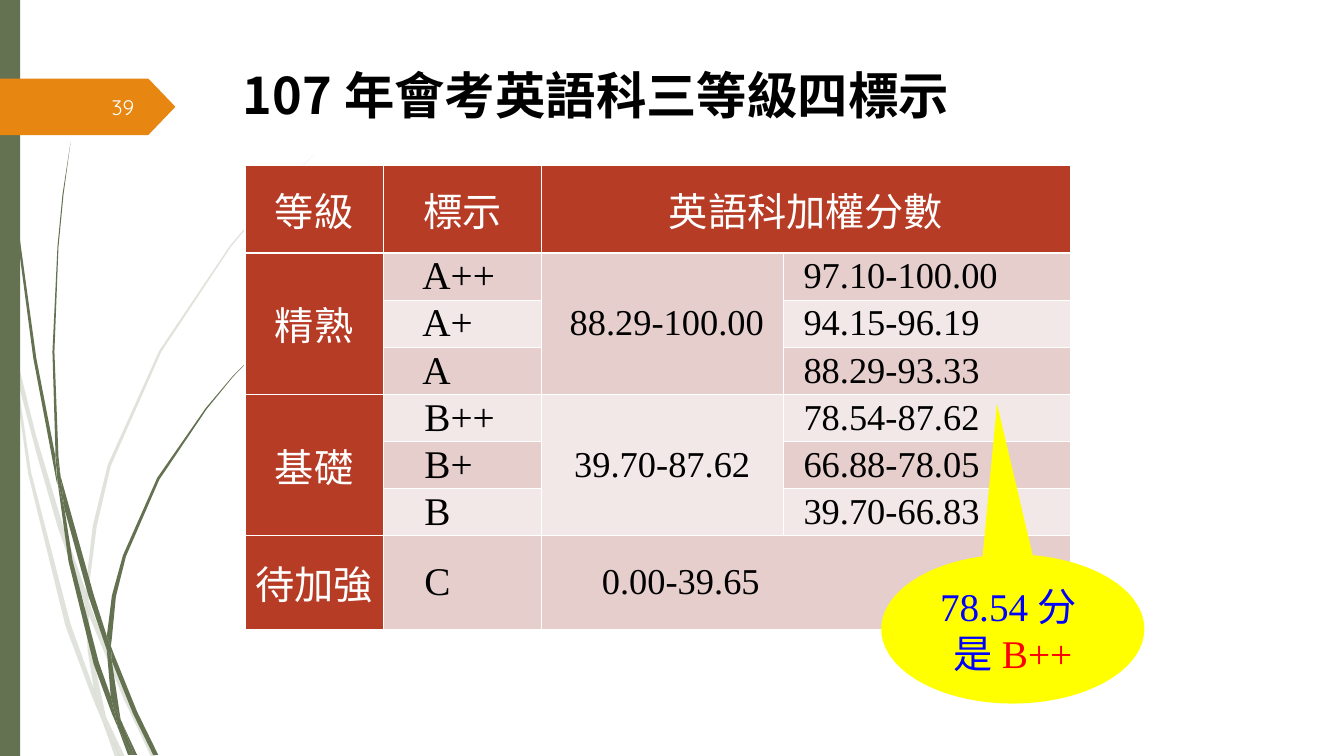
from lxml.etree import SubElement
from pptx import Presentation
from pptx.dml.color import RGBColor
from pptx.enum.shapes import MSO_SHAPE as Shape
from pptx.enum.text import MSO_ANCHOR as Anchor, PP_ALIGN as Align
from pptx.oxml.ns import qn
from pptx.util import Inches, Pt

COLORS = {
    "olive": "647252", "orange": "E78712", "red_brown": "B73C26",
    "band": "E6CECD", "light_band": "F3E8E8", "yellow": "FFFF00", "blue": "0000FF",
    "red": "FF0000", "black": "000000", "white": "FFFFFF", "number": "FEFFFF",
}
CJK, SANS, SERIF = "Noto Sans CJK SC", "Arial", "Times New Roman"

# Outlines of the grass blades, as (x, y) corners in inches.
PALE_BLADES = [
    [(0.11, 3.5), (0.08, 3.22), (0, 2.82), (0, 2.99), (0.1, 3.44)],
    [(0.57, 5.22), (0.84, 5.99), (0.85, 5.86), (0.62, 5.2), (0.36, 4.33), (0.14, 3.45),
     (0.17, 3.76), (0.36, 4.49)],
    [(0.92, 6.07), (0.88, 5.96), (0.88, 6.1), (1.23, 6.94), (1.5, 7.51), (1.55, 7.51),
     (1.27, 6.92)],
    [(1.19, 7.51), (1.24, 7.51), (1.05, 7.11)],
    [(0.93, 6.83), (0.7, 6.19), (0.31, 4.69), (0.17, 3.76), (0.11, 3.5), (0.28, 4.7),
     (0.65, 6.21), (0.92, 6.93), (1.01, 7.14), (0.99, 7.07)],
    [(0.84, 5.99), (0.87, 6.46), (0.93, 6.83), (0.96, 6.92), (1.05, 7.11), (1.04, 7.06),
     (0.91, 6.46), (0.88, 6.1), (0.88, 6.08)],
    [(0.88, 5.84), (0.96, 5.22), (1.1, 4.62), (1.6, 3.49), (2.29, 2.45), (2.68, 1.98),
     (2.9, 1.75), (3.12, 1.53), (2.89, 1.75), (2.68, 1.97), (2.28, 2.44), (1.58, 3.48),
     (1.07, 4.61), (0.92, 5.22), (0.85, 5.84), (0.85, 5.86), (0.88, 5.96)],
    [(1.01, 7.14), (1.14, 7.51), (1.19, 7.51)],
    [(0.88, 6.08), (0.88, 6.1), (0.88, 5.96), (0.85, 5.86), (0.84, 5.99)],
    [(0.96, 6.92), (0.93, 6.83), (0.99, 7.07), (1.01, 7.14), (1.19, 7.51), (1.05, 7.11)],
]
DARK_BLADES = [
    [(0.07, 1.1), (0.17, 2.33), (0.33, 3.55), (0.56, 4.77), (0.57, 4.81), (0.55, 4.57),
     (0.55, 4.53), (0.36, 3.55), (0.19, 2.32), (0.08, 1.09), (0.05, 0.48), (0.03, 0),
     (0.03, 0.48)],
    [(0.88, 5.92), (1.06, 6.45), (1.06, 6.33), (1.06, 6.31), (0.93, 5.9), (0.6, 4.72),
     (0.64, 5.05)],
    [(1.13, 6.49), (1.1, 6.41), (1.11, 6.56), (1.32, 7.08), (1.52, 7.49), (1.57, 7.49),
     (1.36, 7.06)],
    [(1.1, 6.91), (0.98, 6.57), (0.72, 5.56), (0.64, 5.05), (0.57, 4.77), (0.68, 5.57),
     (0.93, 6.59), (1.11, 7.08), (1.17, 7.22), (1.16, 7.17)],
    [(0.6, 4.72), (0.58, 4.53), (0.54, 3.49), (0.58, 2.45), (0.63, 1.93), (0.7, 1.41),
     (0.62, 1.93), (0.57, 2.45), (0.52, 3.49), (0.55, 4.49)],
    [(1.33, 7.49), (1.36, 7.49), (1.22, 7.19)],
    [(0.57, 4.77), (0.64, 5.05), (0.6, 4.72), (0.55, 4.49), (0.55, 4.53)],
    [(1.11, 6.33), (1.15, 5.92), (1.25, 5.52), (1.58, 4.76), (2.05, 4.06), (2.31, 3.74),
     (2.6, 3.44), (2.31, 3.73), (2.04, 4.05), (1.56, 4.74), (1.22, 5.51), (1.11, 5.91),
     (1.06, 6.31), (1.1, 6.41)],
    [(1.17, 7.22), (1.27, 7.49), (1.31, 7.49)],
    [(1.06, 6.45), (1.1, 6.92), (1.16, 7.06), (1.22, 7.19), (1.2, 7.16), (1.11, 6.56),
     (1.09, 6.51)],
    [(1.06, 6.45), (1.09, 6.51), (1.11, 6.56), (1.1, 6.41), (1.06, 6.31)],
    [(1.16, 7.06), (1.1, 6.91), (1.16, 7.17), (1.17, 7.22), (1.31, 7.49), (1.33, 7.49),
     (1.22, 7.19)],
]

COLUMNS = [1.37, 1.57, 2.4, 2.85]
ROWS = [0.87] + [2.8 / 6] * 6 + [0.93]
SCORES = [
    ["等級", "標示", "英語科加權分數", ""],
    ["精熟", "A++", "88.29-100.00", "97.10-100.00"],
    ["", "A+", "", "94.15-96.19"],
    ["", "A", "", "88.29-93.33"],
    ["基礎", "B++", "39.70-87.62", "78.54-87.62"],
    ["", "B+", "", "66.88-78.05"],
    ["", "B", "", "39.70-66.83"],
    ["待加強", "C", "0.00-39.65", ""],
]
MERGES = [((0, 2), (0, 3)), ((1, 0), (3, 0)), ((1, 2), (3, 2)),
          ((4, 0), (6, 0)), ((4, 2), (6, 2)), ((7, 2), (7, 3))]
INDENTS = {1: 0.41, 3: 0.2}
SPECIAL_INDENTS = {(1, 1): 0.39, (2, 1): 0.39, (3, 1): 0.39, (1, 2): 0.11, (7, 2): 0.6}


def rgb(name):
    return RGBColor.from_string(COLORS[name])


def add_span(para, text, size, font, color, bold=False):
    span = para.add_run()
    span.text = text
    span.font.size, span.font.name, span.font.bold = Pt(size), font, bold
    span.font.color.rgb = rgb(color)
    east_asian = SubElement(span.font._element, qn("a:ea"))
    east_asian.set("typeface", CJK)


def paint(shape, color):
    shape.shadow.inherit = False
    shape.fill.solid()
    shape.fill.fore_color.rgb = rgb(color)
    shape.line.fill.background()


def add_block(page, kind, left, top, width, height, color):
    block = page.shapes.add_shape(kind, Inches(left), Inches(top),
                                  Inches(width), Inches(height))
    paint(block, color)
    return block


def add_label(page, left, top, width, height, anchor, align):
    """Add a text box and return its first paragraph."""
    box = page.shapes.add_textbox(Inches(left), Inches(top), Inches(width), Inches(height))
    box.text_frame.word_wrap = True
    box.text_frame.vertical_anchor = anchor
    para = box.text_frame.paragraphs[0]
    para.alignment = align
    return para


def add_blade(page, corners, opacity):
    outline = [(Inches(x), Inches(y)) for x, y in corners]
    builder = page.shapes.build_freeform(*outline[0])
    builder.add_line_segments(outline[1:], close=True)
    blade = builder.convert_to_shape()
    paint(blade, "olive")
    if opacity < 100:
        color = blade._element.spPr.find(qn("a:solidFill")).find(qn("a:srgbClr"))
        SubElement(color, qn("a:alpha"), val=str(opacity * 1000))


def add_cell_borders(cell):
    properties = cell._tc.get_or_add_tcPr()
    for side in ("lnL", "lnR", "lnT", "lnB"):
        line = SubElement(properties, qn(f"a:{side}"), w=str(Pt(1)))
        fill = SubElement(line, qn("a:solidFill"))
        SubElement(fill, qn("a:srgbClr"), val=COLORS["white"])


def fill_cell(cell, row, column, text):
    heading = row == 0 or column == 0
    band = "band" if row % 2 else "light_band"
    add_cell_borders(cell)
    cell.fill.solid()
    cell.fill.fore_color.rgb = rgb("red_brown" if heading else band)
    cell.vertical_anchor = Anchor.MIDDLE
    indent = 0.02 if heading else SPECIAL_INDENTS.get((row, column), INDENTS.get(column, 0.02))
    cell.margin_left, cell.margin_right = Inches(indent), Inches(0.02)
    cell.margin_top = cell.margin_bottom = 0
    if not text:
        return
    para = cell.text_frame.paragraphs[0]
    centred = heading or (column == 2 and row < 7)
    para.alignment = Align.CENTER if centred else Align.LEFT
    size = 28 if heading or column == 1 else 26
    add_span(para, text, size, SANS if heading else SERIF, "white" if heading else "black")


def add_score_table(page):
    frame = page.shapes.add_table(len(ROWS), len(COLUMNS), Inches(2.43), Inches(1.64),
                                  Inches(sum(COLUMNS)), Inches(sum(ROWS)))
    table = frame.table
    for column, width in zip(table.columns, COLUMNS):
        column.width = Inches(width)
    for row, height in zip(table.rows, ROWS):
        row.height = Inches(height)
    for row, texts in enumerate(SCORES):
        for column, text in enumerate(texts):
            fill_cell(table.cell(row, column), row, column, text)
    for first, last in MERGES:
        table.cell(*first).merge(table.cell(*last))


def add_callout(page):
    callout = add_block(page, Shape.OVAL_CALLOUT, 8.74, 5.5, 2.61, 1.48, "yellow")
    callout.adjustments[0], callout.adjustments[1] = -0.06, -1.51
    callout.text_frame.vertical_anchor = Anchor.MIDDLE
    para = callout.text_frame.paragraphs[0]
    para.alignment = Align.CENTER
    add_span(para, "78.54分 ", 28, SERIF, "blue")
    para.add_line_break()
    add_span(para, "是", 28, SERIF, "blue")
    add_span(para, "B++", 28, SERIF, "red")


def main():
    deck = Presentation()
    deck.slide_width, deck.slide_height = Inches(13.33), Inches(7.5)
    page = deck.slides.add_slide(deck.slide_layouts[6])
    for blades, opacity in ((PALE_BLADES, 20), (DARK_BLADES, 100)):
        for corners in blades:
            add_blade(page, corners, opacity)
    add_block(page, Shape.RECTANGLE, 0, 0, 0.2, 7.5, "olive")
    tag = add_block(page, Shape.PENTAGON, 0, 0.78, 1.74, 0.56, "orange")
    tag.adjustments[0] = 0.48
    title = add_label(page, 2.31, 0.59, 9, 1.25, Anchor.TOP, Align.LEFT)
    add_span(title, "107年會考英語科三等級四標示", 36, CJK, "black", bold=True)
    add_score_table(page)
    add_callout(page)
    number = add_label(page, 0.58, 0.86, 0.85, 0.4, Anchor.MIDDLE, Align.RIGHT)
    add_span(number, "39", 15, "Quicksand", "number")
    deck.save("out.pptx")


if __name__ == "__main__":
    main()
